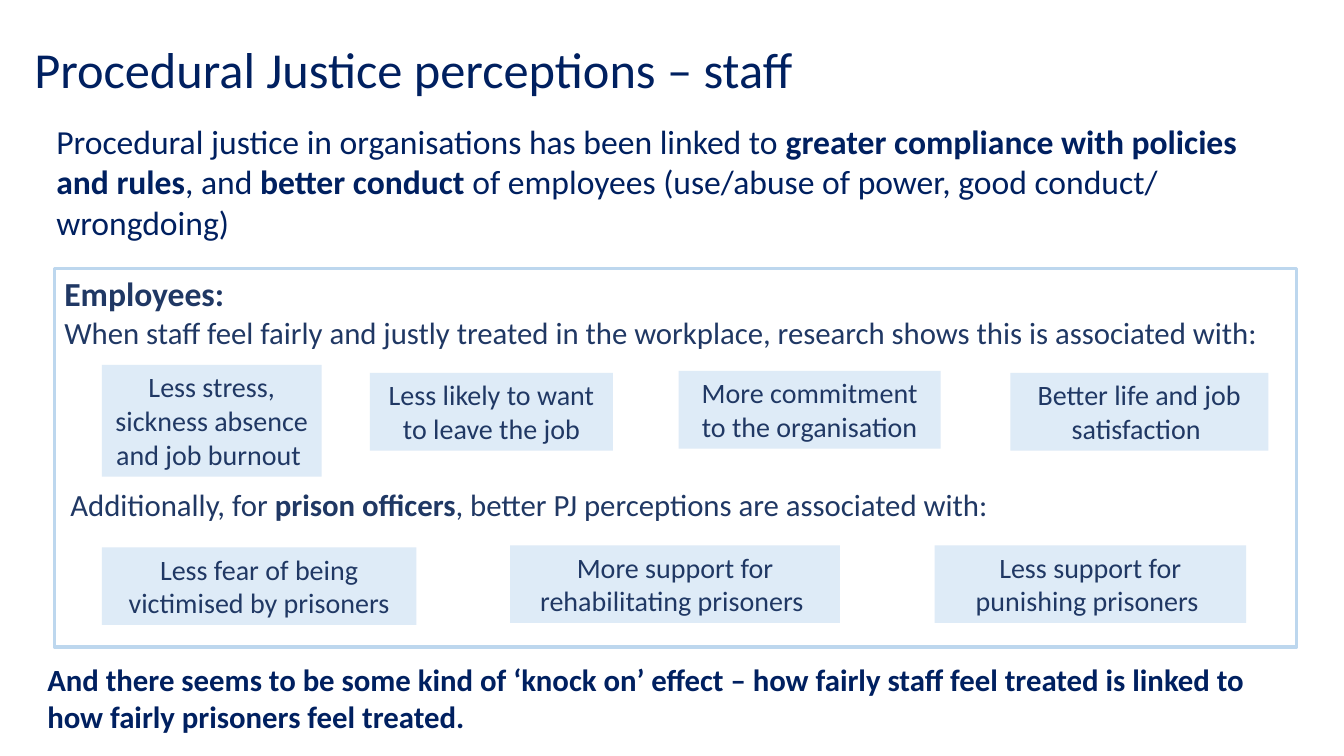
from dataclasses import dataclass

from pptx import Presentation
from pptx.dml.color import RGBColor
from pptx.enum.shapes import MSO_SHAPE
from pptx.enum.text import MSO_ANCHOR, MSO_AUTO_SIZE, PP_ALIGN
from pptx.util import Inches, Pt

RECT = MSO_SHAPE.RECTANGLE
TOP, MID = MSO_ANCHOR.TOP, MSO_ANCHOR.MIDDLE
GROW, FIXED = MSO_AUTO_SIZE.SHAPE_TO_FIT_TEXT, MSO_AUTO_SIZE.NONE
LEFT, CENTER = PP_ALIGN.LEFT, PP_ALIGN.CENTER
WIDE, HIGH = Inches(13.33), Inches(7.5)


@dataclass(frozen=True)
class Theme:
    """Colours, type sizes and font of the slide."""
    navy: str = "002060"
    ink: str = "203864"
    edge: str = "BDD7EE"
    tint: str = "DEEBF7"
    font: str = "Calibri"
    title: int = 36
    lead: int = 24
    body: int = 22
    chip: int = 20
    rule: float = 2.25


THEME = Theme()
TITLE = (1.8, 3.47, 98.2, 12.13)
INTRO = (3.45, 15.33, 93.7, 17.47)
PANEL = (4.05, 35.47, 92.42, 50.13)
CLOSE = (2.78, 86.8, 93.7, 11.2)
TALL, LOW = 14.8, 10.27

STAFF = [
    (3.53, 12.8, 16.35, TALL, "Less stress, sickness absence and job burnout "),
    (23.48, 13.87, 18.08, LOW, "Less likely to want to leave the job"),
    (46.44, 13.6, 19.5, LOW, "More commitment to the organisation"),
    (71.12, 13.87, 19.2, LOW, "Better life and job satisfaction "),
]
GUARDS = [
    (3.53, 36.93, 23.41, LOW, "Less fear of being victimised by prisoners"),
    (33.91, 36.67, 24.53, LOW, "More support for rehabilitating prisoners "),
    (65.49, 36.67, 23.18, LOW, "Less support for punishing prisoners "),
]


def apply(item, form):
    """Set each attribute of an item from a dict."""
    for name, value in form.items():
        setattr(item, name, value)


def frame(box):
    """Turn percent shares of the slide into lengths."""
    x, y, w, h = box
    return [round(part * side / 100)
            for part, side in zip((x, y, w, h), (WIDE, HIGH, WIDE, HIGH))]


def inside(box, x, y, w, h):
    """Shift a part, in slide shares, to the corner of its box."""
    return box[0] + x, box[1] + y, w, h


def write(para, parts, size, color, align=LEFT):
    """Fill a paragraph with pairs of text and boldness."""
    para.alignment = align
    for words, bold in parts:
        run = para.add_run()
        run.text = words
        apply(run.font, {"name": THEME.font, "size": Pt(size), "bold": bold})
        run.font.color.rgb = RGBColor.from_string(color)


def label(slide, box, parts, size, color, wrap=True):
    """Add a free text box."""
    text = slide.shapes.add_textbox(*frame(box)).text_frame
    apply(text, {"word_wrap": wrap, "auto_size": GROW})
    write(text.paragraphs[0], parts, size, color)


def block(slide, box, fill=None, line=None, fit=FIXED):
    """Add a plain rectangle and return its text frame."""
    shape = slide.shapes.add_shape(RECT, *frame(box))
    shape.shadow.inherit = False
    if fill:
        shape.fill.solid()
        shape.fill.fore_color.rgb = RGBColor.from_string(fill)
    else:
        shape.fill.background()
    if line:
        shape.line.color.rgb = RGBColor.from_string(line)
        shape.line.width = Pt(THEME.rule)
    else:
        shape.line.fill.background()
    text = shape.text_frame
    apply(text, {"word_wrap": True, "vertical_anchor": TOP, "auto_size": fit})
    return text


def head(slide, box):
    """Place and write the title."""
    title = slide.shapes.title
    apply(title, dict(zip(("left", "top", "width", "height"), frame(box))))
    text = title.text_frame
    apply(text, {"word_wrap": True, "vertical_anchor": MID, "auto_size": FIXED})
    para = text.paragraphs[0]
    para.line_spacing = 0.9
    write(para, [("Procedural Justice perceptions – staff", False)],
          THEME.title, THEME.navy)


def intro(slide, box):
    """Write the opening statement."""
    label(slide, box, [
        ("Procedural justice in organisations has been linked to ", False),
        ("greater compliance with policies and rules", True),
        (", and ", False),
        ("better conduct ", True),
        ("of employees (use/abuse of power, good conduct/ wrongdoing)", False),
    ], THEME.lead, THEME.navy)


def panel(slide, box):
    """Draw the outlined panel with its two rows of findings."""
    text = block(slide, box, line=THEME.edge)
    write(text.paragraphs[0], [("Employees:", True)], THEME.lead, THEME.ink)
    write(text.add_paragraph(), [
        ("When staff feel fairly and justly treated in the workplace, "
         "research shows this is associated with:", False),
    ], THEME.body, THEME.ink)
    for *part, words in STAFF + GUARDS:
        chip = block(slide, inside(box, *part), fill=THEME.tint, fit=GROW)
        write(chip.paragraphs[0], [(words, False)], THEME.chip, THEME.ink, CENTER)
    label(slide, inside(box, 0.45, 28.13, 70.67, 6.27), [
        ("Additionally, for ", False),
        ("prison officers", True),
        (", better PJ perceptions are associated with:", False),
    ], THEME.body, THEME.ink, wrap=False)


def close(slide, box):
    """Write the closing remark."""
    label(slide, box, [
        ("And there seems to be some kind of ‘knock on’ effect – how fairly "
         "staff feel treated is linked to how fairly prisoners feel treated.",
         True),
    ], THEME.body, THEME.navy)


def main():
    """Build and save the slide."""
    deck = Presentation()
    apply(deck, {"slide_width": WIDE, "slide_height": HIGH})
    slide = deck.slides.add_slide(deck.slide_layouts.get_by_name("Title Only"))
    head(slide, TITLE)
    intro(slide, INTRO)
    panel(slide, PANEL)
    close(slide, CLOSE)
    deck.save("out.pptx")


if __name__ == "__main__":
    main()
